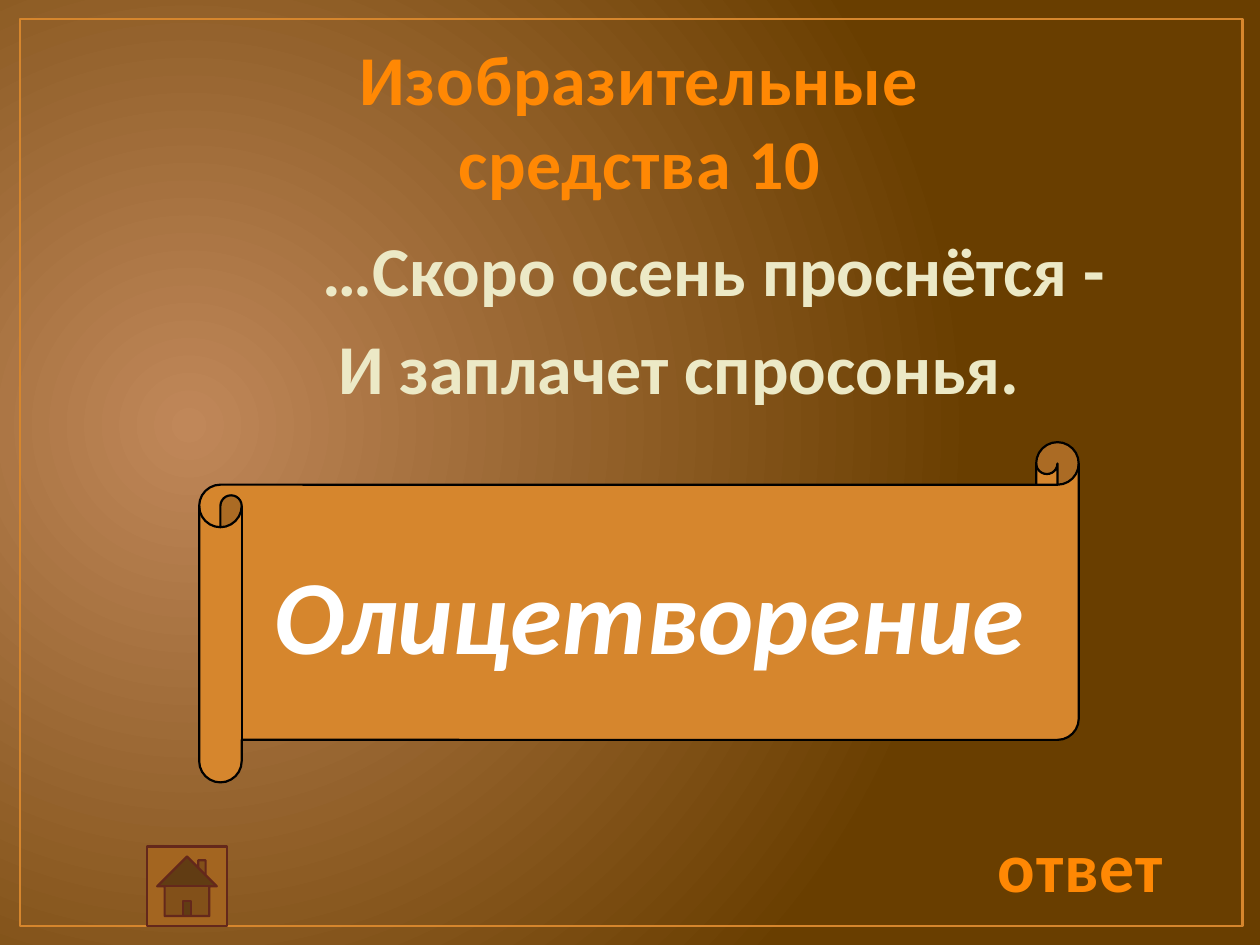
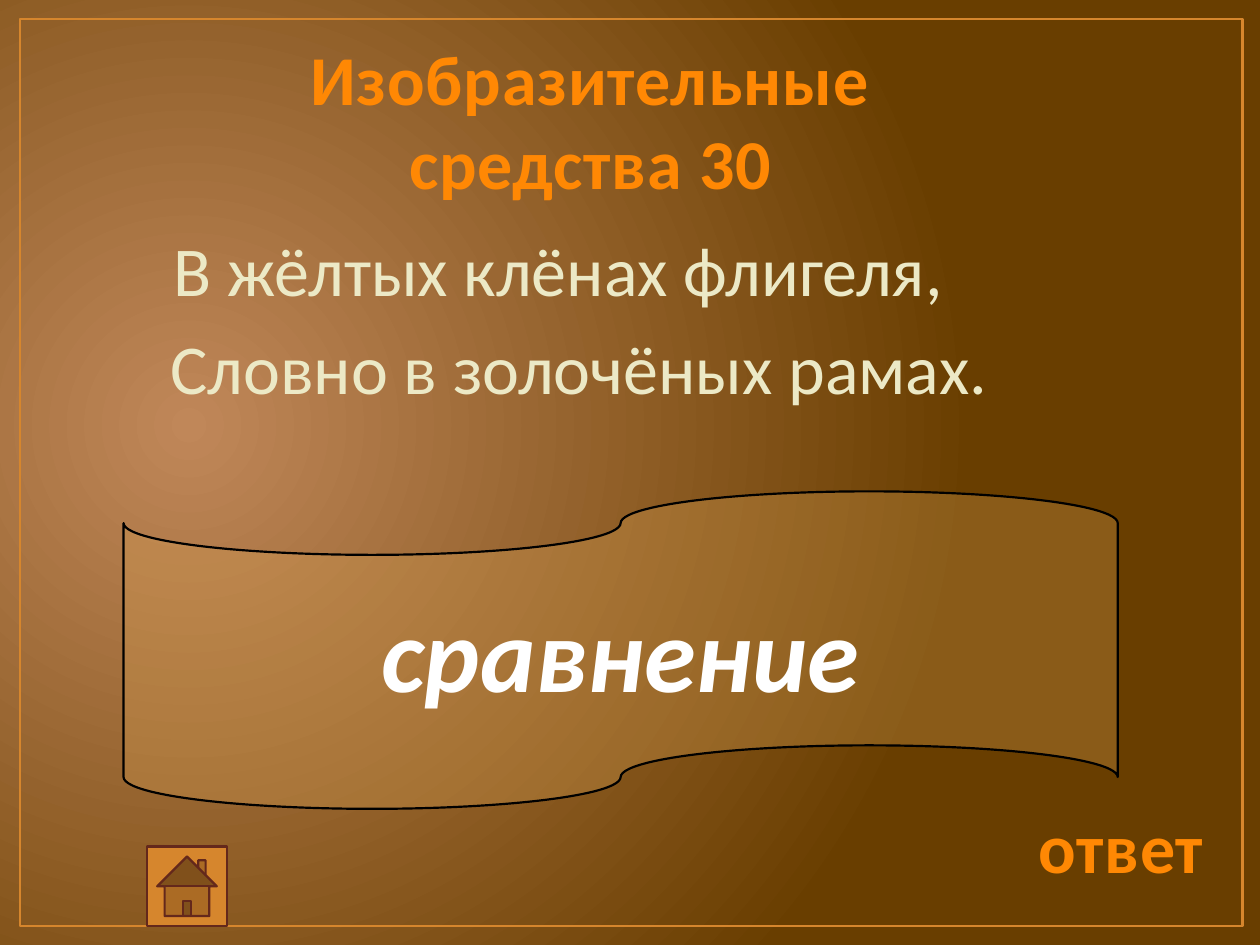
"""Build two quiz slides on figures of speech, each with a verse and its answer."""
import lxml.etree
import pptx
import pptx.dml.color
import pptx.enum.shapes
import pptx.enum.text
import pptx.oxml.ns
import pptx.util

Pt = pptx.util.Pt
SHAPE = pptx.enum.shapes.MSO_SHAPE
ANCHOR = pptx.enum.text.MSO_ANCHOR
ALIGN = pptx.enum.text.PP_ALIGN
AUTO_SIZE = pptx.enum.text.MSO_AUTO_SIZE
qn = pptx.oxml.ns.qn

FONT = "Calibri"
COLORS = {
    "glow": "C08759",
    "brown": "693E00",
    "frame": "D6862D",
    "title_top": "FF8804",
    "title_bottom": "B76000",
    "verse": "ECE9C6",
    "answer": "FFFFFF",
    "outline": "000000",
    "home_line": "64281B",
    "home_visited": "A36520",
    "tape": "DBA455",
}
FRAME = (11.5, 10.8, 698.4, 518.4)
HOME = (84.2, 483.8, 45.4, 45.4)
GLOW_CENTER = {"l": "15000", "t": "50000", "r": "85000", "b": "60000"}

QUESTIONS = [
    {
        "title": "Изобразительные средства 10",
        "title_left": 146.2,
        "verse": [("…Скоро осень проснётся -", 117.5), ("И заплачет спросонья.", 126.2)],
        "verse_box": (59.8, 126, 624.2, 240.5),
        "verse_bold": True,
        "answer": "Олицетворение",
        "banner": SHAPE.HORIZONTAL_SCROLL,
        "banner_box": (113.8, 252.7, 502.6, 194.4),
        "banner_fill": "frame",
        "banner_opacity": 100,
        "home_fill": "home_visited",
        "label_corner": (562.3, 466.6),
    },
    {
        "title": "Изобразительные средства 30",
        "title_left": 118.1,
        "verse": [("В жёлтых клёнах флигеля,", 38), ("Словно в золочёных рамах.", 36.2)],
        "verse_box": (54, 126, 630, 291.6),
        "verse_bold": False,
        "answer": "сравнение",
        "banner": SHAPE.FLOWCHART_PUNCHED_TAPE,
        "banner_box": (70.6, 280.8, 568.1, 181.4),
        "banner_fill": "tape",
        "banner_opacity": 29,
        "home_fill": "frame",
        "label_corner": (585.4, 455.8),
    },
]


def rgb(name):
    return pptx.dml.color.RGBColor.from_string(COLORS[name])


def place(shape, box):
    shape.left, shape.top, shape.width, shape.height = map(Pt, box)


def set_gradient(fill, stops):
    fill.gradient()
    for stop, (position, color) in zip(fill.gradient_stops, stops):
        stop.position = position
        stop.color.rgb = rgb(color)


def add_span(para, text, size, bold=True):
    span = para.add_run()
    span.text = text
    span.font.name = FONT
    span.font.size = Pt(size)
    span.font.bold = bold
    return span


def add_heading(frame, text):
    frame.auto_size = AUTO_SIZE.SHAPE_TO_FIT_TEXT
    para = frame.paragraphs[0]
    para.alignment = ALIGN.CENTER
    span = add_span(para, text, 40)
    set_gradient(span.font.fill, [(0.25, "title_top"), (1, "title_bottom")])
    span.font.fill.gradient_angle = 270
    span.font._element.set("spc", "50")


def add_outlined(slide, kind, box, line, weight, fill=None):
    shape = slide.shapes.add_shape(kind, *map(Pt, box))
    shape.shadow.inherit = False
    shape.line.color.rgb = rgb(line)
    shape.line.width = Pt(weight)
    if fill:
        shape.fill.solid()
        shape.fill.fore_color.rgb = rgb(fill)
    else:
        shape.fill.background()
    return shape


def style_master(master, slide):
    set_gradient(master.background.fill, [(0, "glow"), (1, "brown")])
    gradient = master.element.find(".//" + qn("a:gradFill"))
    gradient.remove(gradient.find(qn("a:lin")))
    circle = lxml.etree.SubElement(gradient, qn("a:path"), path="circle")
    lxml.etree.SubElement(circle, qn("a:fillToRect"), GLOW_CENTER)
    frame = add_outlined(slide, SHAPE.RECTANGLE, FRAME, "frame", 1.5)
    frame.element.find(".//" + qn("p:cNvPr")).set("id", "99")
    master.shapes.element.insert(2, frame.element)


def add_verse(body, question):
    place(body, question["verse_box"])
    body.text_frame.auto_size = AUTO_SIZE.NONE
    for index, (line, indent) in enumerate(question["verse"]):
        frame = body.text_frame
        para = frame.add_paragraph() if index else frame.paragraphs[0]
        span = add_span(para, line, 40, question["verse_bold"])
        span.font.color.rgb = rgb("verse")
        properties = para._p.get_or_add_pPr()
        properties.set("marL", str(Pt(indent)))
        properties.set("indent", "0")
        lxml.etree.SubElement(properties, qn("a:buNone"))


def add_banner(slide, question):
    banner = add_outlined(slide, question["banner"], question["banner_box"],
                          "outline", 1.25, question["banner_fill"])
    if question["banner_opacity"] < 100:
        color = banner.element.spPr.find(qn("a:solidFill"))[0]
        opacity = str(question["banner_opacity"] * 1000)
        lxml.etree.SubElement(color, qn("a:alpha"), val=opacity)
    banner.text_frame.vertical_anchor = ANCHOR.MIDDLE
    para = banner.text_frame.paragraphs[0]
    para.alignment = ALIGN.CENTER
    span = add_span(para, question["answer"], 60)
    span.font.italic = True
    span.font.color.rgb = rgb("answer")


def fill_slide(slide, question):
    title, body = slide.placeholders
    place(title, (question["title_left"], 16.6, 438.5, 104.4))
    title.text_frame.vertical_anchor = ANCHOR.TOP
    add_heading(title.text_frame, question["title"])
    add_verse(body, question)
    add_outlined(slide, SHAPE.ACTION_BUTTON_HOME, HOME, "home_line", 1.25, question["home_fill"])
    add_banner(slide, question)
    label = slide.shapes.add_textbox(*map(Pt, (*question["label_corner"], 110.2, 55.4)))
    label.text_frame.word_wrap = False
    add_heading(label.text_frame, "ответ")


def main():
    deck = pptx.Presentation()
    deck.slide_width, deck.slide_height = Pt(720), Pt(540)
    slides = [deck.slides.add_slide(deck.slide_layouts[1]) for _ in QUESTIONS]
    style_master(deck.slide_master, slides[0])
    for slide, question in zip(slides, QUESTIONS):
        fill_slide(slide, question)
    deck.save("out.pptx")


if __name__ == "__main__":
    main()
